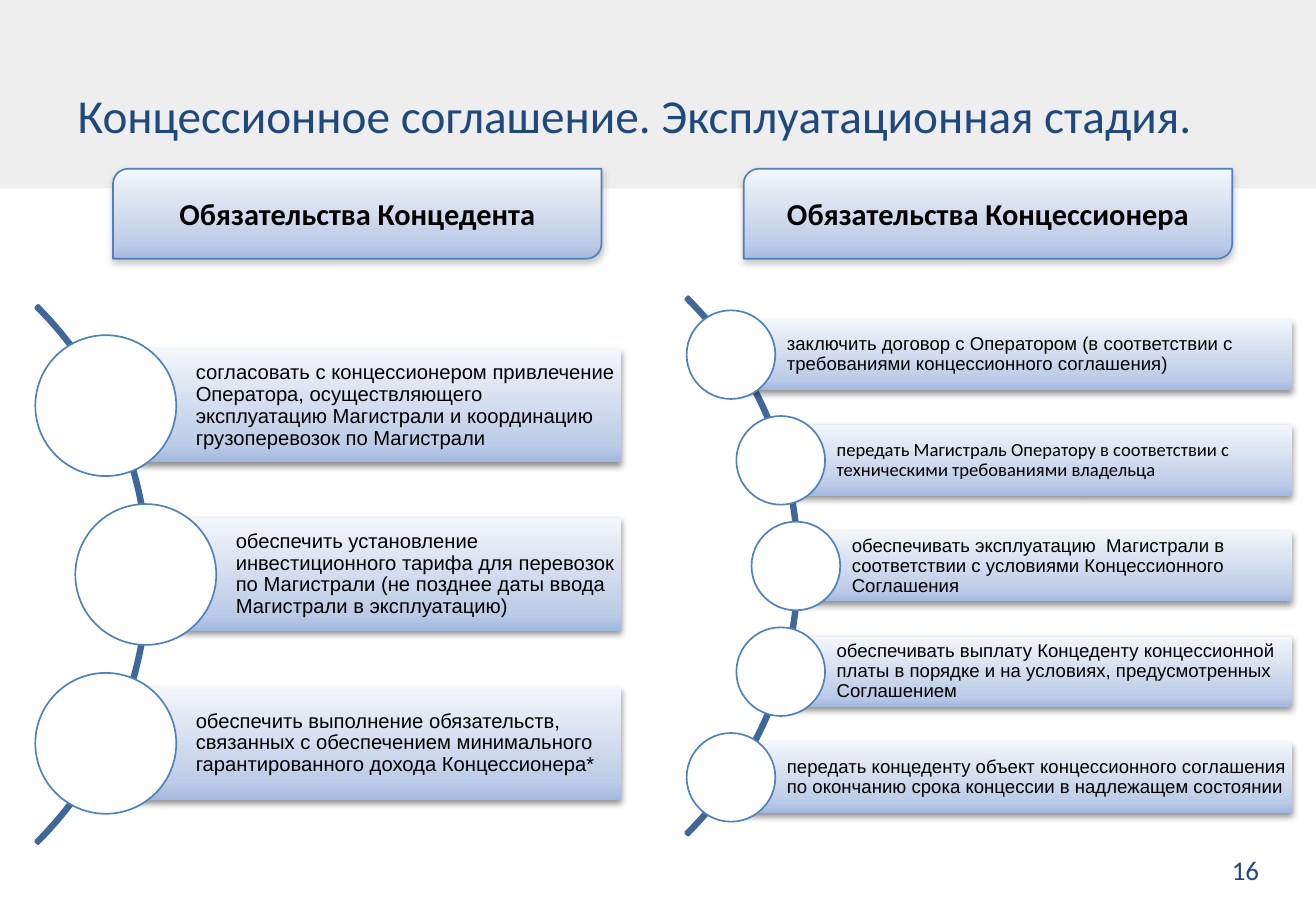
import math

import pptx
import pptx.util
from lxml import etree
from pptx.dml.color import RGBColor
from pptx.enum.shapes import MSO_SHAPE
from pptx.enum.text import MSO_ANCHOR, PP_ALIGN
from pptx.oxml.ns import qn
from pptx.util import Inches

COLORS = {
    "background": "EEEEEE",
    "white": "FFFFFF",
    "black": "000000",
    "navy": "1F497D",
    "arc": "3F6797",
    "outline": "4F81BD",
    "header_shadow": "808080",
}
GRADIENT = [(0, "F3F6FA"), (85, "BCCBE7"), (100, "A3B8DF")]
ARC_SIZE = 6.26
ORBIT = 3.1

GRANTOR_DUTIES = [
    ("согласовать с концессионером привлечение Оператора, осуществляющего эксплуатацию Магистрали и координацию грузоперевозок по Магистрали", "Arial"),
    ("обеспечить установление инвестиционного тарифа для перевозок по Магистрали (не позднее даты ввода Магистрали в эксплуатацию)", "Arial"),
    ("обеспечить выполнение обязательств, связанных с обеспечением минимального гарантированного дохода Концессионера*", "Arial"),
]
CONCESSIONAIRE_DUTIES = [
    ("заключить договор с Оператором (в соответствии с требованиями концессионного соглашения)", "Arial"),
    ("передать Магистраль Оператору в соответствии с техническими требованиями владельца", "Calibri"),
    ("обеспечивать эксплуатацию  Магистрали в соответствии с условиями Концессионного Соглашения", "Arial"),
    ("обеспечивать выплату Концеденту концессионной платы в порядке и на условиях, предусмотренных Соглашением", "Arial"),
    ("передать концеденту объект концессионного соглашения по окончанию срока концессии в надлежащем состоянии", "Arial"),
]


def rgb(name):
    return RGBColor.from_string(COLORS[name])


def add_shape(s, kind, box, fill=None, line=None, width=1):
    sp = s.shapes.add_shape(kind, *map(Inches, box))
    sp.shadow.inherit = False
    if fill:
        sp.fill.solid()
        sp.fill.fore_color.rgb = rgb(fill)
    if line:
        sp.line.color.rgb = rgb(line)
        sp.line.width = pptx.util.Pt(width)
    else:
        sp.line.fill.background()
    return sp


def add_gradient(sp):
    sp.fill.gradient()
    sp.fill.gradient_angle = 270
    stops = sp.element.spPr.find(".//" + qn("a:gsLst"))
    for stop in list(stops):
        stops.remove(stop)
    for pos, color in GRADIENT:
        stop = etree.SubElement(stops, qn("a:gs"), pos=str(pos * 1000))
        etree.SubElement(stop, qn("a:srgbClr"), val=color)


def add_shadow(sp, color):
    effects = sp.element.spPr.find(qn("a:effectLst"))
    shadow = etree.SubElement(
        effects, qn("a:outerShdw"), blurRad=str(pptx.util.Pt(4)),
        dist=str(pptx.util.Pt(2)), dir="5400000", rotWithShape="0")
    tint = etree.SubElement(shadow, qn("a:srgbClr"), val=COLORS[color])
    etree.SubElement(tint, qn("a:alpha"), val="43000")


def set_text(sp, text, size, color="black", font="Calibri", bold=False,
             align=PP_ALIGN.LEFT, anchor=MSO_ANCHOR.MIDDLE):
    tf = sp.text_frame
    tf.word_wrap = True
    tf.vertical_anchor = anchor
    tf.text = text
    p = tf.paragraphs[0]
    p.alignment = align
    r = p.runs[0]
    r.font.name = font
    r.font.size = pptx.util.Pt(size)
    r.font.bold = bold
    r.font.color.rgb = rgb(color)
    return tf


def add_label(s, box, text, size, align, anchor):
    sp = s.shapes.add_textbox(*map(Inches, box))
    set_text(sp, text, size, "navy", align=align, anchor=anchor)


def add_header(s, left, text):
    sp = add_shape(s, MSO_SHAPE.ROUND_2_DIAG_RECTANGLE,
                   (left, 1.39, 4.02, 0.74), line="outline")
    add_gradient(sp)
    add_shadow(sp, "header_shadow")
    set_text(sp, text, 18, bold=True, align=PP_ALIGN.CENTER)


def add_duty(s, x, y, right, height, diameter, inset, size, text, font):
    bar = add_shape(s, MSO_SHAPE.RECTANGLE,
                    (x, y - height / 2, right - x, height))
    add_gradient(bar)
    add_shadow(bar, "black")
    tf = set_text(bar, text, size, font=font)
    tf.paragraphs[0].line_spacing = 0.9
    tf.margin_left = Inches(inset)
    tf.margin_right = tf.margin_top = tf.margin_bottom = Inches(0.03)
    add_shape(s, MSO_SHAPE.OVAL,
              (x - diameter / 2, y - diameter / 2, diameter, diameter),
              "white", "outline")


def add_duty_arc(s, cx, cy, pitch, duties, **style):
    arc = add_shape(s, MSO_SHAPE.BLOCK_ARC,
                    (cx - ARC_SIZE / 2, cy - ARC_SIZE / 2, ARC_SIZE, ARC_SIZE),
                    line="arc", width=2)
    arc.fill.background()
    for i, value in enumerate((189, 27, 0.004)):
        arc.adjustments[i] = value
    for i, (text, font) in enumerate(duties):
        dy = (i - (len(duties) - 1) / 2) * pitch
        x = cx + math.sqrt(ORBIT ** 2 - dy ** 2)
        add_duty(s, x, cy + dy, text=text, font=font, **style)


def main():
    prs = pptx.Presentation()
    prs.slide_width = Inches(10.83)
    prs.slide_height = Inches(7.5)
    s = prs.slides.add_slide(prs.slide_layouts[6])
    s.background.fill.solid()
    s.background.fill.fore_color.rgb = rgb("background")
    add_shape(s, MSO_SHAPE.RECTANGLE, (0, 1.55, 10.83, 5.95), "white")
    add_label(s, (0.54, 0.39, 9.75, 0.84),
              "Концессионное соглашение. Эксплуатационная стадия.",
              28, PP_ALIGN.LEFT, MSO_ANCHOR.BOTTOM)
    add_duty_arc(s, -1.9, 4.73, 1.39, GRANTOR_DUTIES, right=5.11,
                 height=0.93, diameter=1.16, inset=0.74, size=12)
    add_duty_arc(s, 3.45, 4.66, 0.87, CONCESSIONAIRE_DUTIES, right=10.63,
                 height=0.58, diameter=0.73, inset=0.46, size=11)
    add_header(s, 0.93, "Обязательства Концедента")
    add_header(s, 6.12, "Обязательства Концессионера")
    add_label(s, (7.93, 6.98, 2.53, 0.52), "16", 16,
              PP_ALIGN.RIGHT, MSO_ANCHOR.TOP)
    prs.save("out.pptx")


if __name__ == "__main__":
    main()
